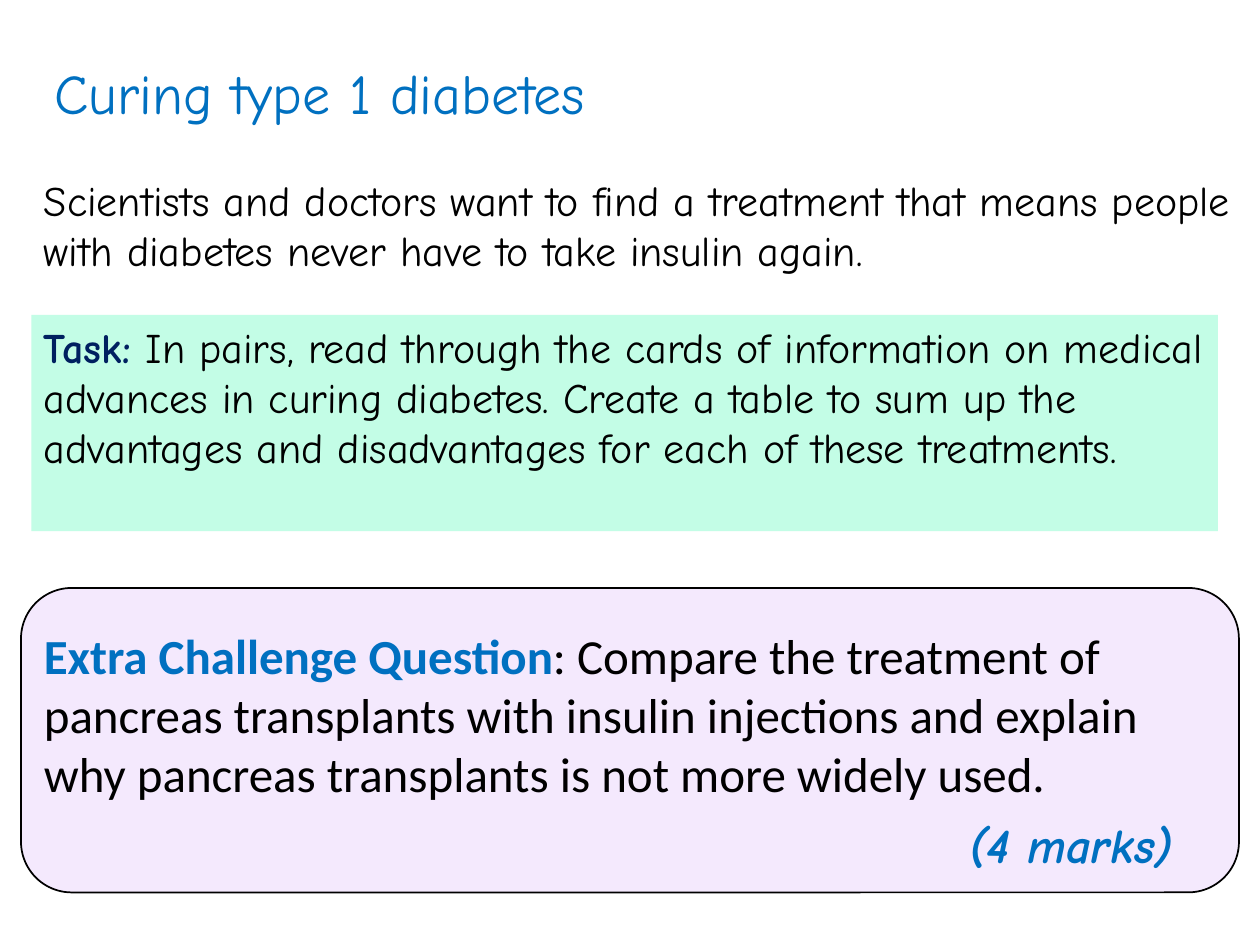
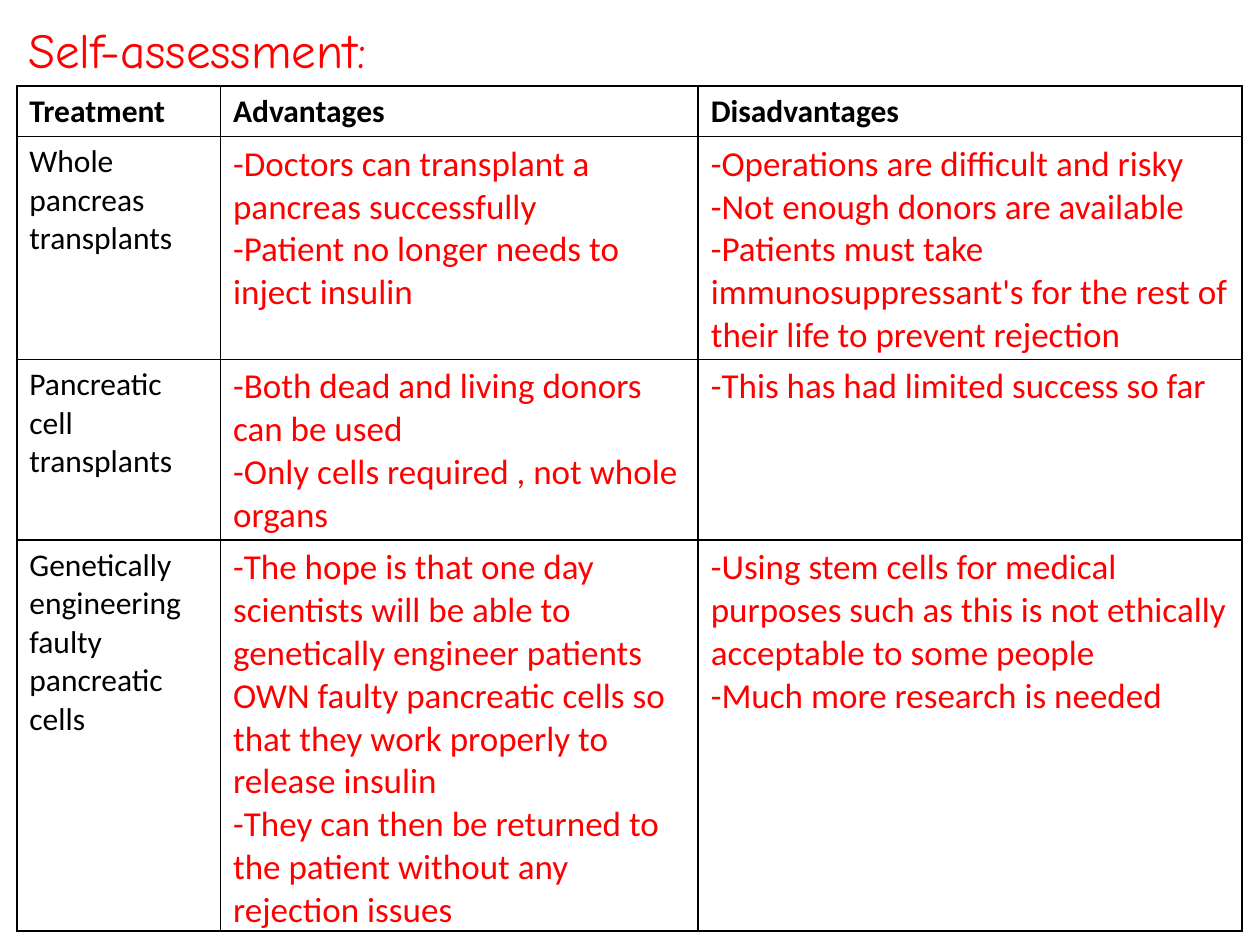
from dataclasses import dataclass

from lxml.etree import SubElement
from pptx import Presentation
from pptx.dml.color import RGBColor
from pptx.enum.shapes import MSO_SHAPE
from pptx.enum.text import MSO_ANCHOR, PP_ALIGN
from pptx.oxml.ns import qn
from pptx.util import Inches, Pt


@dataclass(frozen=True)
class Theme:
    hand: str = "Comic Neue"
    plain: str = "Calibri"
    ink: str = "000000"
    blue: str = "0070C0"
    navy: str = "002060"
    answer: str = "FF0000"
    mint: str = "C3FDE6"
    lilac: str = "F4E9FD"
    title: int = 32
    heading: int = 28
    body: int = 24
    answers: int = 20
    label: int = 18
    line: int = 1


class Lesson:
    columns, rows = 120, 90

    def __init__(self, theme):
        self.theme = theme
        self.deck = Presentation()
        self.deck.slide_width, self.deck.slide_height = Inches(10), Inches(7.5)
        self.slide = None

    def new_slide(self):
        self.slide = self.deck.slides.add_slide(self.deck.slide_layouts[6])

    def across(self, columns):
        return round(self.deck.slide_width * columns / self.columns)

    def down(self, rows):
        return round(self.deck.slide_height * rows / self.rows)

    def place(self, left, top, width, height):
        return self.across(left), self.down(top), self.across(width), self.down(height)

    def add_words(self, paragraph, words, size, color, font, bold=False, italic=False):
        run = paragraph.add_run()
        run.text = words
        run.font.name, run.font.size = font, Pt(size)
        run.font.bold, run.font.italic = bold, italic
        run.font.color.rgb = RGBColor.from_string(color)

    def fill_frame(self, frame, paragraphs, align=PP_ALIGN.LEFT):
        frame.word_wrap = True
        frame.vertical_anchor = MSO_ANCHOR.TOP
        for index, runs in enumerate(paragraphs):
            paragraph = frame.add_paragraph() if index else frame.paragraphs[0]
            paragraph.alignment = align
            for run in runs:
                self.add_words(paragraph, **run)

    def text(self, area, *runs, align=PP_ALIGN.LEFT):
        box = self.slide.shapes.add_textbox(*self.place(*area))
        self.fill_frame(box.text_frame, [runs], align)

    def panel(self, area, fill, *runs, outline=None, kind=MSO_SHAPE.RECTANGLE):
        panel = self.slide.shapes.add_shape(kind, *self.place(*area))
        panel.shadow.inherit = False
        panel.fill.solid()
        panel.fill.fore_color.rgb = RGBColor.from_string(fill)
        if outline:
            panel.line.color.rgb = RGBColor.from_string(outline)
            panel.line.width = Pt(self.theme.line)
        else:
            panel.line.fill.background()
        if runs:
            self.fill_frame(panel.text_frame, [runs])

    def border(self, cell):
        properties = cell._tc.get_or_add_tcPr()
        for side in ("a:lnL", "a:lnR", "a:lnT", "a:lnB"):
            line = SubElement(properties, qn(side), w=str(Pt(self.theme.line)))
            fill = SubElement(line, qn("a:solidFill"))
            SubElement(fill, qn("a:srgbClr"), val=self.theme.ink)

    def table(self, left, top, widths, heights, records):
        area = self.place(left, top, sum(widths), sum(heights))
        table = self.slide.shapes.add_table(len(heights), len(widths), *area).table
        table.first_row = table.horz_banding = False
        for column, width in zip(table.columns, widths):
            column.width = self.across(width)
        for row, height, record in zip(table.rows, heights, records):
            row.height = self.down(height)
            for cell, paragraphs in zip(row.cells, record):
                self.border(cell)
                cell.fill.background()
                cell.vertical_anchor = MSO_ANCHOR.TOP
                self.fill_frame(cell.text_frame, paragraphs)


def build_task(lesson):
    theme = lesson.theme
    body = dict(size=theme.body, color=theme.ink, font=theme.hand)
    challenge = dict(size=theme.heading, font=theme.plain)
    lesson.new_slide()
    lesson.panel((2, 56, 116, 29), theme.lilac, outline=theme.ink,
                 kind=MSO_SHAPE.ROUNDED_RECTANGLE)
    lesson.text((4, 5, 72, 7.7), dict(words="Curing type 1 diabetes", size=theme.title,
                                      color=theme.blue, font=theme.hand))
    lesson.text((3, 16, 119, 10.9), dict(
        body, words="Scientists and doctors want to find a treatment that means people "
                    "with diabetes never have to take insulin again."))
    lesson.panel(
        (3, 30, 113, 20.6), theme.mint,
        dict(body, words="Task: ", color=theme.navy, bold=True),
        dict(body, words="In pairs, read through the cards of information on medical "
                         "advances in curing diabetes. Create a table to sum up the "
                         "advantages and disadvantages for each of these treatments."))
    lesson.text(
        (3, 59, 115, 18.1),
        dict(challenge, words="Extra Challenge Question", color=theme.blue, bold=True),
        dict(challenge, color=theme.ink,
             words=": Compare the treatment of pancreas transplants with insulin injections "
                   "and explain why pancreas transplants is not more widely used."))
    lesson.text((87, 77, 30, 6.8), dict(words="(4 marks)", size=theme.heading,
                                        color=theme.blue, font=theme.hand,
                                        bold=True, italic=True),
                align=PP_ALIGN.CENTER)


TREATMENTS = [
    ("Whole pancreas transplants",
     ["-Doctors can transplant a pancreas successfully",
      "-Patient no longer needs to inject insulin"],
     ["-Operations are difficult and risky",
      "-Not enough donors are available",
      "-Patients must take immunosuppressant's for the rest of their life "
      "to prevent rejection"]),
    ("Pancreatic cell transplants",
     ["-Both dead and living donors can be used",
      "-Only cells required , not whole organs"],
     ["-This has had limited success so far"]),
    ("Genetically engineering faulty pancreatic cells",
     ["-The hope is that one day scientists will be able to genetically engineer "
      "patients OWN faulty pancreatic cells so that they work properly to release insulin",
      "-They can then be returned to the patient without any rejection issues"],
     ["-Using stem cells for medical purposes such as this is not ethically "
      "acceptable to some people",
      "-Much more research is needed"]),
]


def build_answers(lesson):
    theme = lesson.theme
    label = dict(size=theme.label, color=theme.ink, font=theme.plain)
    answer = dict(size=theme.answers, color=theme.answer, font=theme.plain)
    headings = ("Treatment", "Advantages", "Disadvantages")
    records = [[[[dict(label, words=heading, bold=True)]] for heading in headings]]
    for treatment, *opinions in TREATMENTS:
        answers = [[[dict(answer, words=point)] for point in points] for points in opinions]
        records.append([[[dict(label, words=treatment)]], *answers])
    lesson.new_slide()
    lesson.text((1.5, 1.3, 49, 6.8), dict(words="Self-assessment:", size=theme.heading,
                                          color=theme.answer, font=theme.hand))
    lesson.table(1.6, 8.2, (19.4, 45.5, 51.8), (4.8, 21.2, 17.2, 37.2), records)


def main():
    lesson = Lesson(Theme())
    build_task(lesson)
    build_answers(lesson)
    lesson.deck.save("out.pptx")


if __name__ == "__main__":
    main()
